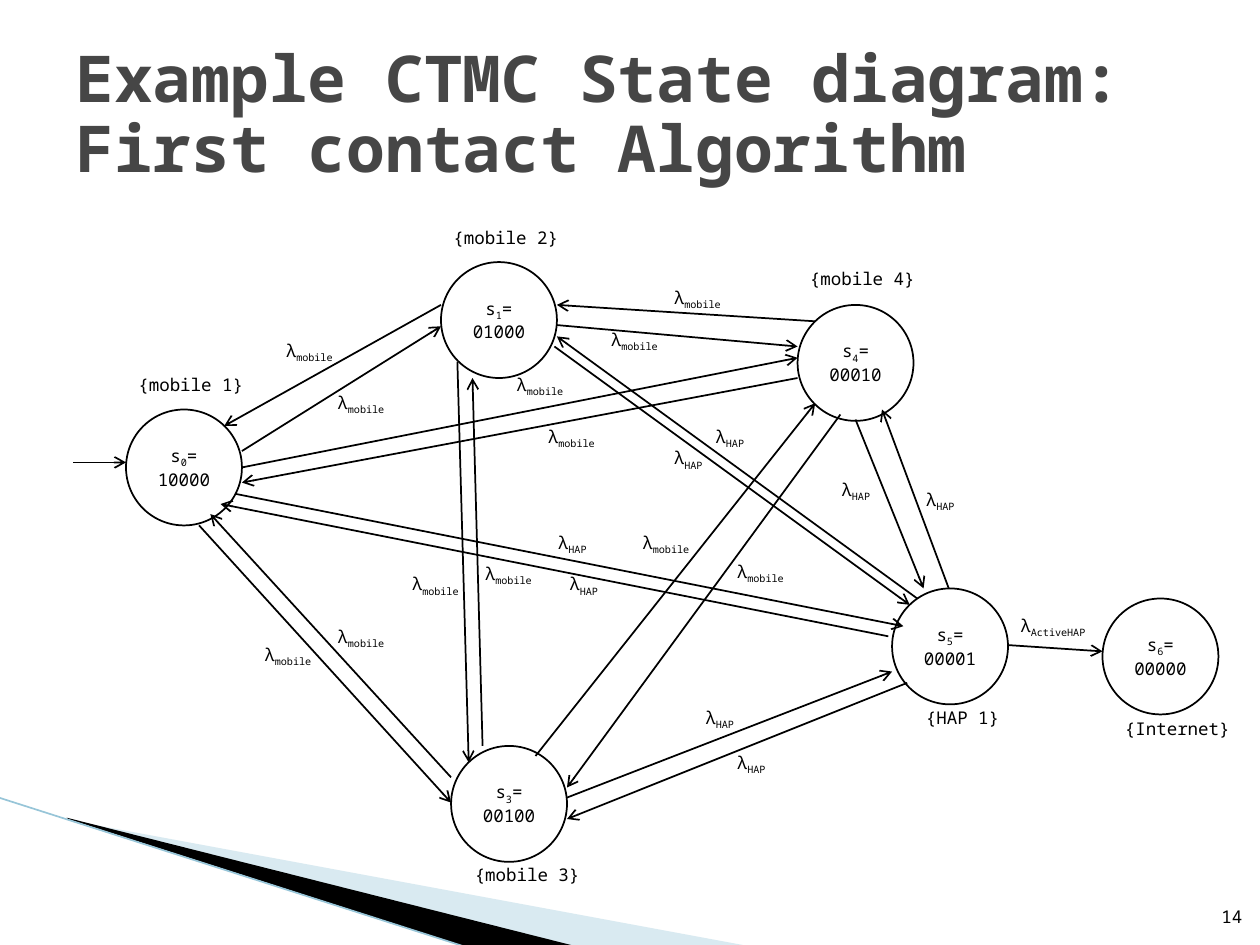
from typing import NamedTuple

from lxml.etree import SubElement
from pptx import Presentation
from pptx.dml.color import RGBColor
from pptx.enum.shapes import MSO_CONNECTOR as Connector, MSO_SHAPE as Preset
from pptx.enum.text import MSO_ANCHOR as Anchor, PP_ALIGN as Align
from pptx.oxml.ns import qn
from pptx.util import Pt

SCALE = 9144  # EMU per px, 100 px to the inch
FONT = "Noto Sans Mono"
COLORS = {
    "ink": "000000",
    "title": "464646",
    "pale_wedge": "A0CBDC",
    "edge": "97C5D8",
}
DIAMETER = 92
LABEL_WIDTH, LABEL_HEIGHT = 108, 27

Point = tuple[int, int]


class State(NamedTuple):
    index: str
    code: str
    name: str
    corner: Point
    name_at: Point


class Transition(NamedTuple):
    start: Point
    end: Point
    rate: str = ""
    label_at: Point = (0, 0)


STATES = [
    State("0", "10000", "{mobile 1}", (100, 325), (100, 292)),
    State("1", "01000", "{mobile 2}", (350, 208), (350, 175)),
    State("3", "00100", "{mobile 3}", (358, 592), (367, 681)),
    State("4", "00010", "{mobile 4}", (633, 242), (633, 208)),
    State("5", "00001", "{HAP 1}", (708, 467), (725, 556)),
    State("6", "00000", "{Internet}", (875, 475), (883, 565)),
]

TRANSITIONS = [
    # Entry and exit
    Transition((58, 367), (100, 367)),
    Transition((800, 512), (875, 517), "ActiveHAP", (800, 483)),
    # s0 with s1, s3, s4, s5
    Transition((192, 358), (350, 259), "mobile", (258, 306)),
    Transition((350, 242), (178, 338), "mobile", (217, 265)),
    Transition((158, 417), (358, 637), "mobile", (200, 506)),
    Transition((358, 617), (167, 408), "mobile", (258, 492)),
    Transition((192, 371), (633, 284), "mobile", (400, 292)),
    Transition((633, 300), (192, 383), "mobile", (425, 333)),
    Transition((187, 392), (717, 497), "HAP", (433, 417)),
    Transition((705, 505), (175, 400), "HAP", (442, 450)),
    # s1 with s3, s4, s5
    Transition((363, 287), (372, 605), "mobile", (317, 450)),
    Transition((383, 592), (375, 300), "mobile", (375, 442)),
    Transition((442, 258), (633, 275), "mobile", (475, 256)),
    Transition((647, 255), (442, 242), "mobile", (525, 223)),
    Transition((440, 275), (722, 480), "HAP", (525, 350)),
    Transition((728, 475), (442, 267), "HAP", (558, 333)),
    # s3 with s4, s5
    Transition((425, 600), (647, 320), "mobile", (500, 417)),
    Transition((667, 329), (450, 625), "mobile", (575, 440)),
    Transition((450, 633), (708, 533), "HAP", (550, 556)),
    Transition((720, 542), (450, 650), "HAP", (575, 592)),
    # s4 with s5
    Transition((679, 333), (733, 467), "HAP", (658, 375)),
    Transition((753, 467), (700, 325), "HAP", (725, 383)),
]


def px(*lengths: int) -> list[int]:
    return [length * SCALE for length in lengths]


def color(name: str) -> RGBColor:
    return RGBColor.from_string(COLORS[name])


def style(paragraph, size: float = 10, ink: str = "ink", bold: bool = False) -> None:
    paragraph.font.name = FONT
    paragraph.font.size = Pt(size)
    paragraph.font.bold = bold
    paragraph.font.color.rgb = color(ink)


def add_subscripted(paragraph, base: str, subscript: str, rest: str = "") -> None:
    paragraph.add_run().text = base
    if subscript:
        run = paragraph.add_run()
        run.text = subscript
        run.font._element.set("baseline", "-25000")
    if rest:
        paragraph.add_run().text = rest
    style(paragraph)


def add_box(slide, corner: Point, width: int, height: int):
    frame = slide.shapes.add_textbox(*px(*corner, width, height)).text_frame
    frame.word_wrap = True
    return frame


def add_label(slide, corner: Point, text: str, subscript: str = "") -> None:
    frame = add_box(slide, corner, LABEL_WIDTH, LABEL_HEIGHT)
    add_subscripted(frame.paragraphs[0], text, subscript)


def add_line(slide, start: Point, end: Point, ink: str = "ink",
             width: float = 1, arrow: bool = True) -> None:
    line = slide.shapes.add_connector(Connector.STRAIGHT, *px(*start, *end))
    line.line.color.rgb = color(ink)
    line.line.width = Pt(width)
    properties = line._element.spPr
    if arrow:
        SubElement(properties.find(qn("a:ln")), qn("a:tailEnd"), type="arrow")
    SubElement(properties, qn("a:effectLst"))


def add_wedge(slide, points: list[Point], fill: str, opacity: int = 100) -> None:
    builder = slide.shapes.build_freeform(*points[0], scale=SCALE)
    builder.add_line_segments(points[1:], close=True)
    wedge = builder.convert_to_shape()
    wedge.shadow.inherit = False
    wedge.fill.solid()
    wedge.fill.fore_color.rgb = color(fill)
    wedge.line.fill.background()
    if opacity < 100:
        solid = wedge._element.spPr.find(qn("a:solidFill"))
        SubElement(solid[0], qn("a:alpha"), val=str(opacity * 1000))


def add_state(slide, state: State) -> None:
    circle = slide.shapes.add_shape(
        Preset.OVAL, *px(*state.corner, DIAMETER, DIAMETER))
    circle.shadow.inherit = False
    circle.fill.background()
    circle.line.color.rgb = color("ink")
    circle.line.width = Pt(1)
    frame = circle.text_frame
    frame.vertical_anchor = Anchor.MIDDLE
    add_subscripted(frame.paragraphs[0], "s", state.index, "=")
    code = frame.add_paragraph()
    code.text = state.code
    style(code)
    for paragraph in frame.paragraphs:
        paragraph.alignment = Align.CENTER
    add_label(slide, state.name_at, state.name)


def add_transition(slide, transition: Transition) -> None:
    add_line(slide, transition.start, transition.end)
    if transition.rate:
        add_label(slide, transition.label_at, "λ", transition.rate)


def main() -> None:
    presentation = Presentation()
    presentation.slide_width, presentation.slide_height = px(1000, 750)
    slide = presentation.slides.add_slide(presentation.slide_layouts[6])

    # Corner decoration
    add_wedge(slide, [(55, 651), (595, 751), (456, 751), (55, 650)], "pale_wedge", 40)
    add_wedge(slide, [(53, 649), (457, 751), (372, 752), (54, 650)], "ink")
    add_line(slide, (-1, 633), (371, 752), "edge", 0.95, arrow=False)

    # Title
    frame = add_box(slide, (50, 30), 900, 125)
    frame.vertical_anchor = Anchor.MIDDLE
    title = frame.paragraphs[0]
    title.text = "Example CTMC State diagram:\vFirst contact Algorithm"
    title.line_spacing = 0.9
    style(title, 36.9, "title", bold=True)

    # State diagram
    for state in STATES:
        add_state(slide, state)
    for transition in TRANSITIONS:
        add_transition(slide, transition)

    # Slide number
    frame = add_box(slide, (946, 701), 40, 40)
    frame.margin_left = frame.margin_right = 0
    frame.vertical_anchor = Anchor.BOTTOM
    number = frame.paragraphs[0]
    number.text = "14"
    number.alignment = Align.RIGHT
    style(number)

    presentation.save("out.pptx")


if __name__ == "__main__":
    main()
